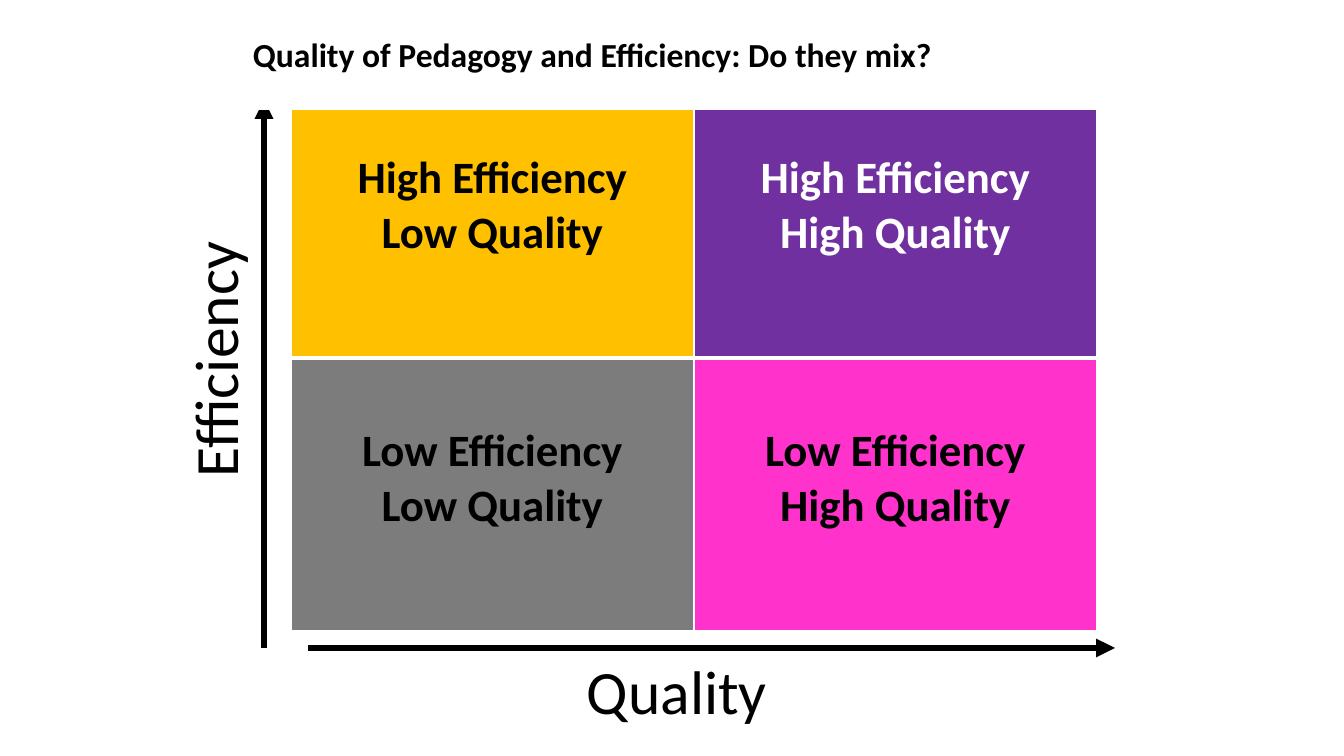
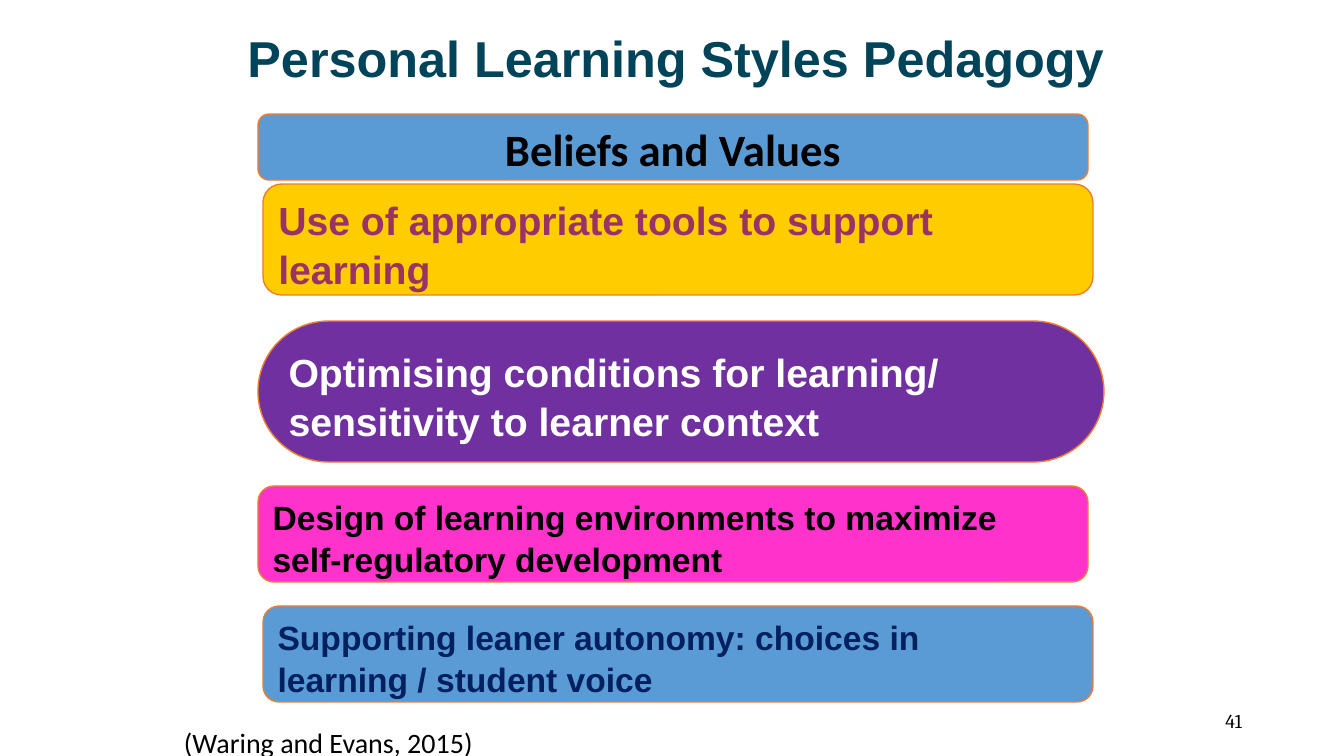
"""Build two slides on pedagogy: a quality/efficiency matrix and a stack of principles."""
from lxml import etree
from pptx import Presentation
from pptx.dml.color import RGBColor
from pptx.enum.shapes import MSO_CONNECTOR, MSO_SHAPE
from pptx.enum.text import MSO_ANCHOR, PP_ALIGN
from pptx.oxml.ns import qn
from pptx.util import Pt

PX = 914400 / 100.8
BLACK = RGBColor(0x00, 0x00, 0x00)
WHITE = RGBColor(0xFF, 0xFF, 0xFF)
AMBER = RGBColor(0xFF, 0xC0, 0x00)
YELLOW = RGBColor(0xFF, 0xCC, 0x00)
PURPLE = RGBColor(0x70, 0x30, 0xA0)
GREY = RGBColor(0x7C, 0x7C, 0x7C)
PINK = RGBColor(0xFF, 0x33, 0xCC)
BLUE = RGBColor(0x5B, 0x9B, 0xD5)
ORANGE = RGBColor(0xED, 0x7D, 0x31)
TEAL = RGBColor(0x01, 0x43, 0x59)
PLUM = RGBColor(0x99, 0x33, 0x66)
NAVY = RGBColor(0x00, 0x20, 0x60)

MATRIX_TITLE = "Quality of Pedagogy and Efficiency: Do they mix?"
MATRIX_BOX = (291, 85, 806, 546)
MATRIX = [
    [(("High Efficiency", "Low Quality"), AMBER, BLACK),
     (("High Efficiency", "High Quality"), PURPLE, WHITE)],
    [(("Low Efficiency", "Low Quality"), GREY, BLACK),
     (("Low Efficiency", "High Quality"), PINK, BLACK)],
]
AXES = [(264, 648, 264, 100), (308, 648, 1115, 648)]
AXIS_LABELS = [("Quality", (577, 648, 461, 85), None),
               ("Efficiency", (172, 44, 95, 443), "vert270")]

STYLES_TITLE = "Personal Learning Styles Pedagogy"
ROUNDED = 0.16667
BARS = [
    ("Beliefs and Values", (258, 114, 830, 66), ROUNDED, BLUE,
     dict(size=32, color=BLACK, font="Calibri", align=PP_ALIGN.CENTER)),
    ("Use of appropriate tools to support learning", (263, 184, 830, 111), ROUNDED, YELLOW,
     dict(size=28, color=PLUM, spacing=1.04)),
    ("Optimising conditions for learning/ sensitivity to learner context",
     (258, 321, 846, 141), 0.5, PURPLE, dict(size=28, color=WHITE, spacing=1.04)),
    ("Design of learning environments to maximize self-regulatory development",
     (258, 486, 830, 96), ROUNDED, PINK, dict(size=24, color=BLACK, spacing=1.04)),
    ("Supporting leaner autonomy: choices in learning / student voice",
     (263, 606, 830, 96), ROUNDED, BLUE, dict(size=24, color=NAVY, spacing=1.04)),
]
CITATION = "(Waring and Evans, 2015)"
SLIDE_NUMBER = "41"


def px(*lengths):
    return [round(length * PX) for length in lengths]


def write(frame, lines, size, color, font="Arial", bold=False,
          align=PP_ALIGN.LEFT, anchor=MSO_ANCHOR.TOP, spacing=None):
    frame.word_wrap = True
    frame.vertical_anchor = anchor
    for index, line in enumerate(lines):
        paragraph = frame.add_paragraph() if index else frame.paragraphs[0]
        paragraph.text = line
        paragraph.alignment = align
        paragraph.line_spacing = spacing
        paragraph.font.size = Pt(size)
        paragraph.font.name = font
        paragraph.font.bold = bold
        paragraph.font.color.rgb = color


def add_text(slide, text, box, **style):
    shape = slide.shapes.add_textbox(*px(*box))
    write(shape.text_frame, [text], **style)
    return shape


def add_title(slide, text, box, **style):
    shape = add_text(slide, text, box, bold=True, **style)
    shape.fill.solid()
    shape.fill.fore_color.rgb = WHITE


def add_bar(slide, text, box, corner, fill, style):
    shape = slide.shapes.add_shape(MSO_SHAPE.ROUNDED_RECTANGLE, *px(*box))
    shape.shadow.inherit = False
    shape.adjustments[0] = corner
    shape.fill.solid()
    shape.fill.fore_color.rgb = fill
    shape.line.color.rgb = ORANGE
    shape.line.width = Pt(1)
    shape.text_frame.margin_bottom = 0
    write(shape.text_frame, [text], bold=True, **style)


def add_arrow(slide, ends):
    arrow = slide.shapes.add_connector(MSO_CONNECTOR.STRAIGHT, *px(*ends))
    arrow.line.color.rgb = BLACK
    arrow.line.width = Pt(4.5)
    etree.SubElement(arrow.line._get_or_add_ln(), qn("a:tailEnd"), type="triangle")
    etree.SubElement(arrow._element.spPr, qn("a:effectLst"))


def set_borders(cell, widths):
    properties = cell._tc.get_or_add_tcPr()
    for index, (side, width) in enumerate(widths.items()):
        line = etree.Element(qn(f"a:ln{side}"), w=str(Pt(width)))
        fill = etree.SubElement(line, qn("a:solidFill"))
        etree.SubElement(fill, qn("a:srgbClr"), val=str(WHITE))
        properties.insert(index, line)


def add_matrix(slide):
    left, top, width, height = MATRIX_BOX
    table = slide.shapes.add_table(2, 2, *px(left, top, width, height)).table
    for row_index, row in enumerate(MATRIX):
        table.rows[row_index].height = px(height / 2)[0]
        for column_index, (lines, fill, color) in enumerate(row):
            cell = table.cell(row_index, column_index)
            cell.fill.solid()
            cell.fill.fore_color.rgb = fill
            cell.margin_top = px(66)[0]
            write(cell.text_frame, lines, 32, color, "Calibri", True, PP_ALIGN.CENTER)
            set_borders(cell, {"L": 1, "R": 1, "T": 1 if row_index == 0 else 3,
                               "B": 3 if row_index == 0 else 1})


def build_matrix_slide(slide):
    add_matrix(slide)
    for ends in AXES:
        add_arrow(slide, ends)
    for text, box, direction in AXIS_LABELS:
        label = add_text(slide, text, box, size=44, color=BLACK, font="Calibri")
        if direction:
            label.text_frame._txBody.bodyPr.set("vert", direction)
    add_title(slide, MATRIX_TITLE, (243, 29, 897, 81), size=24, color=BLACK, font="Calibri")


def build_styles_slide(slide):
    add_title(slide, STYLES_TITLE, (208, 25, 936, 72), size=36, color=TEAL,
              align=PP_ALIGN.CENTER, anchor=MSO_ANCHOR.MIDDLE, spacing=0.9)
    for bar in BARS:
        add_bar(slide, *bar)
    add_text(slide, CITATION, (174, 721, 420, 35), size=20, color=BLACK, font="Calibri")
    add_text(slide, SLIDE_NUMBER, (950, 701, 302, 40), size=14, color=BLACK, font="Cambria",
             align=PP_ALIGN.RIGHT, anchor=MSO_ANCHOR.MIDDLE)


def main():
    presentation = Presentation()
    presentation.slide_width, presentation.slide_height = px(1344, 756)
    for build in (build_matrix_slide, build_styles_slide):
        build(presentation.slides.add_slide(presentation.slide_layouts[6]))
    presentation.save("out.pptx")


if __name__ == "__main__":
    main()
